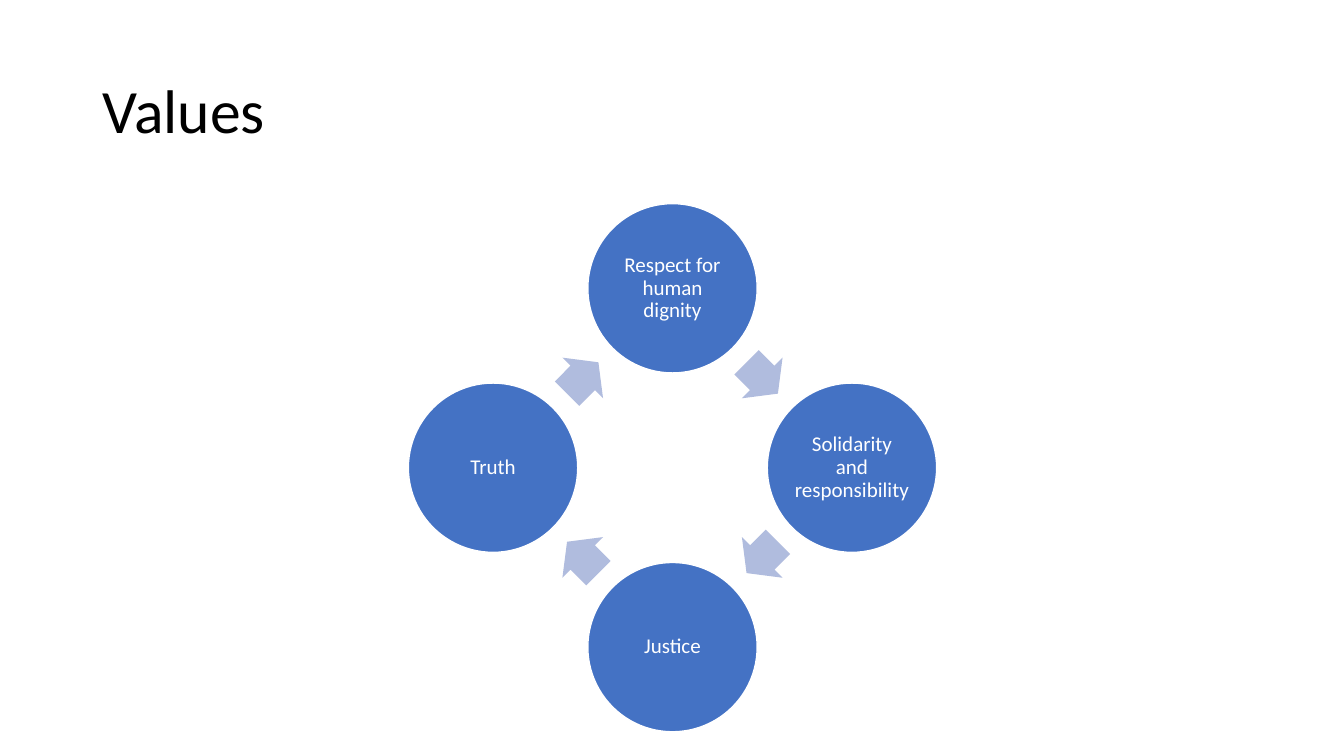
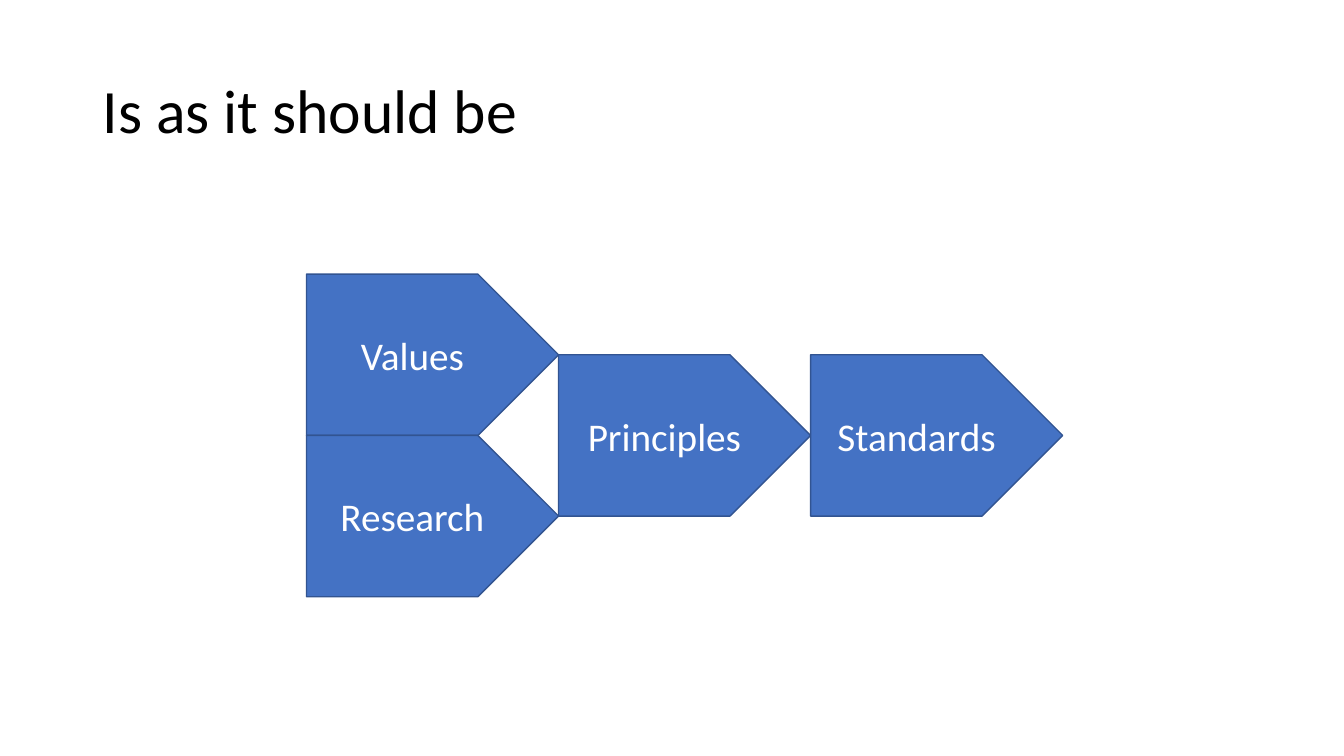
import math

from pptx import Presentation
from pptx.dml.color import RGBColor
from pptx.enum import shapes, text
from pptx.util import Inches, Pt

FONT = "Calibri"
BLACK = RGBColor(0x00, 0x00, 0x00)
WHITE = RGBColor(0xFF, 0xFF, 0xFF)
BLUE = RGBColor(0x44, 0x72, 0xC4)
DARK_BLUE = RGBColor(0x32, 0x54, 0x91)
PALE_BLUE = RGBColor(0xB0, 0xBC, 0xDE)


def write_text(shape, content, size, color=WHITE, align=text.PP_ALIGN.CENTER,
               line_spacing=1.0, inset=None):
    frame = shape.text_frame
    frame.word_wrap = True
    frame.vertical_anchor = text.MSO_ANCHOR.MIDDLE
    if inset is not None:
        frame.margin_left = frame.margin_right = Inches(inset)
        frame.margin_top = frame.margin_bottom = Inches(inset)
    paragraph = frame.paragraphs[0]
    paragraph.alignment = align
    paragraph.line_spacing = line_spacing
    run = paragraph.add_run()
    run.text = content
    run.font.name = FONT
    run.font.size = Pt(size)
    run.font.color.rgb = color


def add_filled_shape(slide, kind, left, top, width, height, fill, line=None):
    shape = slide.shapes.add_shape(
        kind, Inches(left), Inches(top), Inches(width), Inches(height))
    shape.shadow.inherit = False
    shape.fill.solid()
    shape.fill.fore_color.rgb = fill
    if line is None:
        shape.line.fill.background()
    else:
        shape.line.color.rgb = line
        shape.line.width = Pt(1)
    return shape


def add_titled_slide(presentation, title):
    slide = presentation.slides.add_slide(presentation.slide_layouts[6])
    box = slide.shapes.add_textbox(
        Inches(0.92), Inches(0.4), Inches(11.5), Inches(1.45))
    write_text(box, title, 44, color=BLACK, align=text.PP_ALIGN.LEFT,
               line_spacing=0.9)
    return slide


def add_cycle(slide, labels, left, top, size, diameter):
    """Circles clockwise from the top of a square box, arrows between them."""
    arrow_width, arrow_height = 0.44, 0.57
    center_x, center_y = left + size / 2, top + size / 2
    radius = (size - diameter) / 2
    step = 360 / len(labels)
    arrow_radius = radius * math.cos(math.radians(step / 2))

    def place(angle, distance, width, height):
        turn = math.radians(angle)
        return (center_x + distance * math.sin(turn) - width / 2,
                center_y - distance * math.cos(turn) - height / 2,
                width, height)

    for index, label in enumerate(labels):
        angle = index * step
        circle = add_filled_shape(
            slide, shapes.MSO_SHAPE.OVAL,
            *place(angle, radius, diameter, diameter), BLUE, WHITE)
        write_text(circle, label, 15, line_spacing=0.9, inset=0.02)

        # Arrow to the next circle
        middle = angle + step / 2
        arrow = add_filled_shape(
            slide, shapes.MSO_SHAPE.RIGHT_ARROW,
            *place(middle, arrow_radius, arrow_width, arrow_height), PALE_BLUE)
        arrow.adjustments[0] = 0.6
        arrow.adjustments[1] = 0.5
        arrow.rotation = middle


def add_flow(slide, columns, left, top, width, height, pitch):
    """Columns of pentagons, each column centred on the same height."""
    middle = top + height
    for column, labels in enumerate(columns):
        first = middle - len(labels) * height / 2
        for row, label in enumerate(labels):
            pentagon = add_filled_shape(
                slide, shapes.MSO_SHAPE.PENTAGON, left + column * pitch,
                first + row * height, width, height, BLUE, DARK_BLUE)
            write_text(pentagon, label, 28)


def main():
    presentation = Presentation()
    presentation.slide_width = Inches(13.33)
    presentation.slide_height = Inches(7.5)

    # Values cycle
    slide = add_titled_slide(presentation, "Values")
    add_cycle(slide,
              ["Respect for human dignity", "Solidarity and responsibility",
               "Justice", "Truth"],
              left=4.05, top=2.02, size=5.24, diameter=1.68)

    # From values and research to standards
    slide = add_titled_slide(presentation, "Is as it should be")
    add_flow(slide, [["Values", "Research"], ["Principles"], ["Standards"]],
             left=3.04, top=2.72, width=2.5, height=1.6, pitch=2.5)

    presentation.save("out.pptx")


if __name__ == "__main__":
    main()
